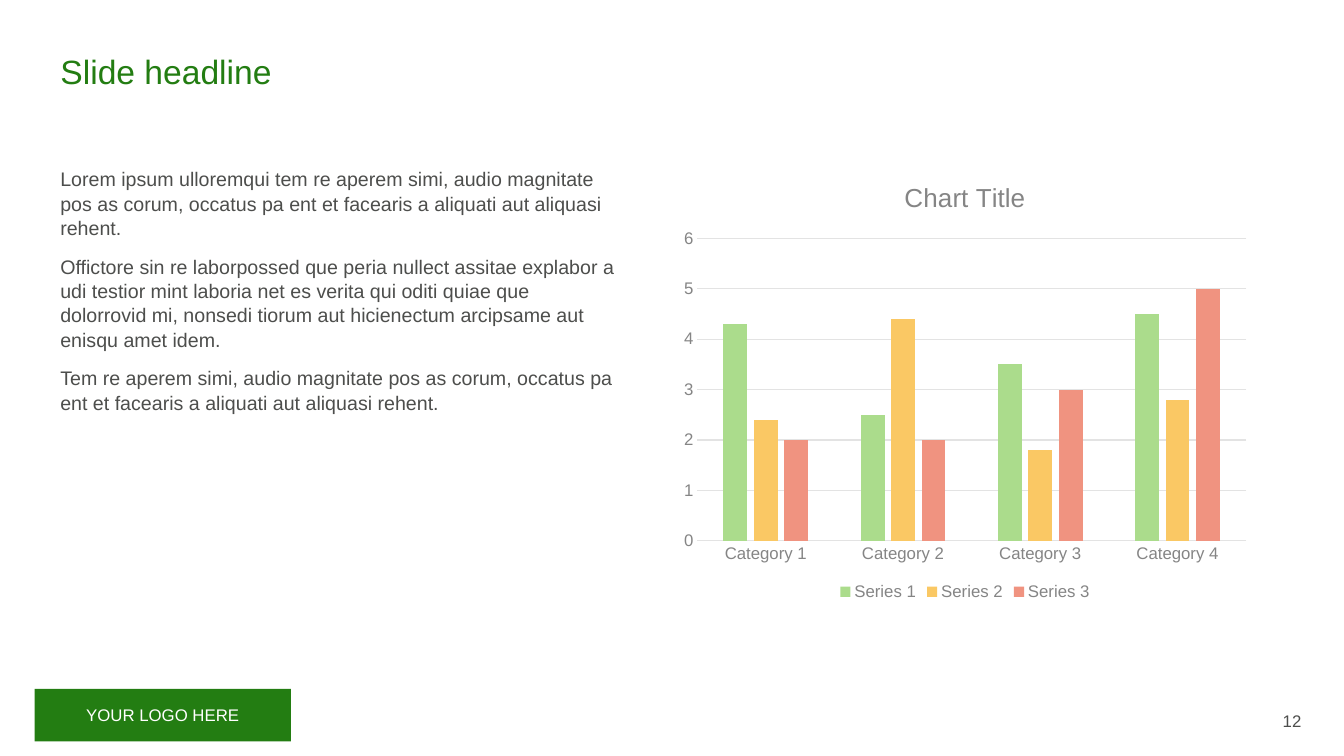
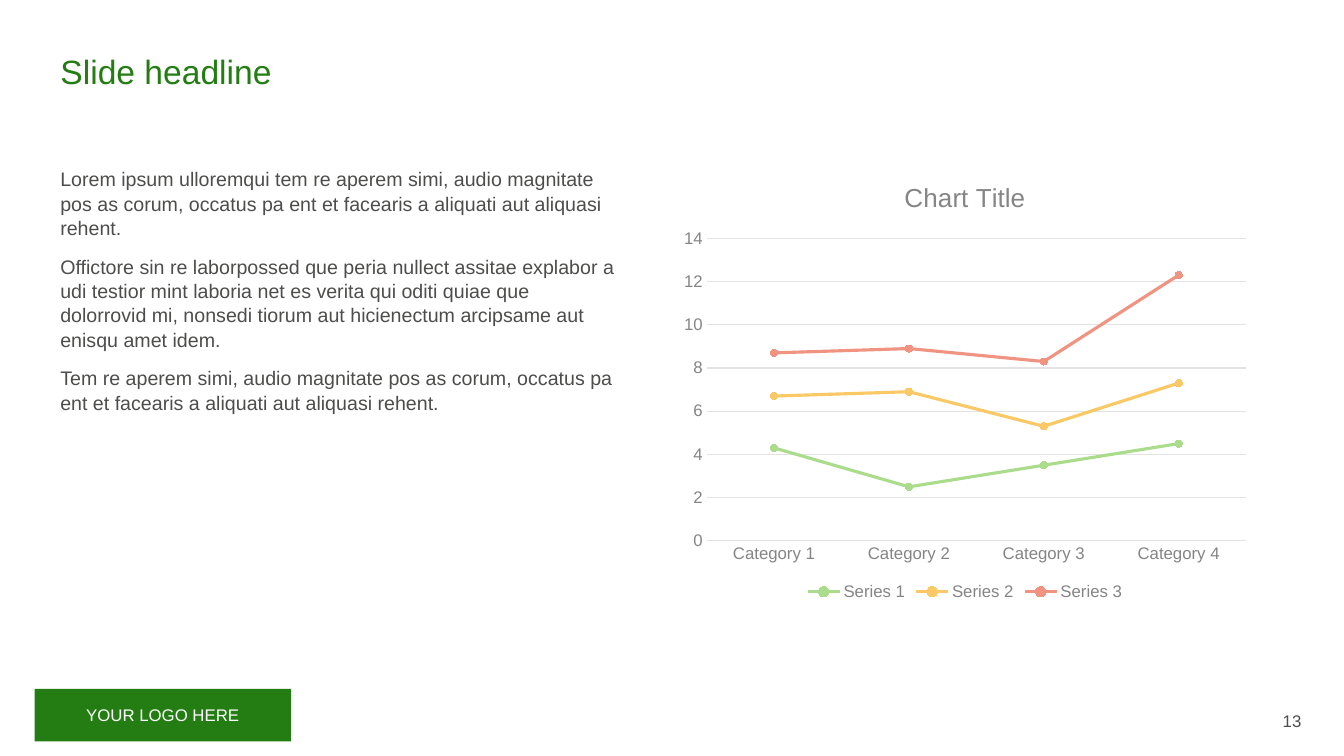
"""Build two slides that pair body text with a column chart and a stacked line chart."""
from pptx import Presentation
from pptx.chart.data import CategoryChartData
from pptx.dml.color import RGBColor
from pptx.enum.chart import XL_CHART_TYPE as ChartType, XL_LEGEND_POSITION as LegendPosition
from pptx.enum.chart import XL_MARKER_STYLE as MarkerStyle, XL_TICK_MARK as TickMark
from pptx.enum.shapes import MSO_SHAPE as Shape
from pptx.enum.text import MSO_ANCHOR as Anchor, MSO_AUTO_SIZE as AutoSize, PP_ALIGN as Align
from pptx.util import Pt

COLORS = {
    "green": "237D12",
    "white": "FFFFFF",
    "text": "4D4E4C",
    "chart": "434343",
    "label": "858585",
    "grid": "E3E3E3",
}
SERIES = [
    ("Series 1", (4.3, 2.5, 3.5, 4.5), "ABDC8C"),
    ("Series 2", (2.4, 4.4, 1.8, 2.8), "FAC864"),
    ("Series 3", (2, 2, 3, 5), "F09380"),
]
BODY = [
    "Lorem ipsum ulloremqui tem re aperem simi, audio magnitate pos as corum, "
    "occatus pa ent et facearis a aliquati aut aliquasi rehent.",
    "Offictore sin re laborpossed que peria nullect assitae explabor a udi testior "
    "mint laboria net es verita qui oditi quiae que dolorrovid mi, nonsedi tiorum "
    "aut hicienectum arcipsame aut enisqu amet idem.",
    "Tem re aperem simi, audio magnitate pos as corum, occatus pa ent et facearis "
    "a aliquati aut aliquasi rehent.",
]
SLIDES = [("12", ChartType.COLUMN_CLUSTERED), ("13", ChartType.LINE_MARKERS_STACKED)]
CONTENT_TOP, CONTENT_HEIGHT = Pt(115.2), Pt(316.8)


def style_font(font, size, color):
    font.name = "Arial"
    font.size = Pt(size)
    font.bold = False
    font.color.rgb = RGBColor.from_string(COLORS[color])


def write(shape, texts, size, color, align=Align.LEFT, anchor=Anchor.TOP, spacing=1.0):
    frame = shape.text_frame
    frame.word_wrap = True
    frame.auto_size = AutoSize.NONE
    frame.vertical_anchor = anchor
    for index, text in enumerate(texts):
        paragraph = frame.add_paragraph() if index else frame.paragraphs[0]
        paragraph.alignment = align
        paragraph.line_spacing = spacing
        paragraph.space_before = Pt(10 if index else 0)
        run = paragraph.add_run()
        run.text = text
        style_font(run.font, size, color)


presentation = Presentation()
presentation.slide_width = Pt(960)
presentation.slide_height = Pt(540)
title_only = presentation.slide_layouts[5]

chart_data = CategoryChartData()
chart_data.categories = [f"Category {number}" for number in range(1, 5)]
for name, values, _ in SERIES:
    chart_data.add_series(name, values)

for page_number, chart_type in SLIDES:
    slide = presentation.slides.add_slide(title_only)
    slide.background.fill.solid()
    slide.background.fill.fore_color.rgb = RGBColor.from_string(COLORS["white"])

    title = slide.shapes.title
    title.left, title.top, title.width, title.height = Pt(36), Pt(36), Pt(862), Pt(42.5)
    write(title, ["Slide headline"], 24, "green", spacing=0.9)

    logo_box = slide.shapes.add_shape(Shape.RECTANGLE, Pt(24.8), Pt(492), Pt(183), Pt(37.5))
    logo_box.shadow.inherit = False
    logo_box.fill.solid()
    logo_box.fill.fore_color.rgb = RGBColor.from_string(COLORS["green"])
    logo_box.line.fill.background()
    write(logo_box, ["YOUR LOGO HERE"], 12, "white", Align.CENTER, Anchor.MIDDLE)

    page_box = slide.shapes.add_textbox(Pt(720.7), Pt(500.4), Pt(216), Pt(28.8))
    write(page_box, [page_number], 12, "text", Align.RIGHT, Anchor.MIDDLE)

    body_box = slide.shapes.add_textbox(Pt(36), CONTENT_TOP, Pt(414.7), CONTENT_HEIGHT)
    write(body_box, BODY, 14, "text", spacing=1.04)

    chart = slide.shapes.add_chart(
        chart_type, Pt(480.2), CONTENT_TOP, Pt(418.3), CONTENT_HEIGHT, chart_data
    ).chart
    style_font(chart.font, 10, "chart")
    chart.has_title = True
    chart_title_run = chart.chart_title.text_frame.paragraphs[0].add_run()
    chart_title_run.text = "Chart Title"
    style_font(chart_title_run.font, 18.6, "label")
    chart.has_legend = True
    chart.legend.position = LegendPosition.BOTTOM
    chart.legend.include_in_layout = False
    style_font(chart.legend.font, 12, "label")

    category_axis, value_axis = chart.category_axis, chart.value_axis
    for axis in (category_axis, value_axis):
        axis.major_tick_mark = axis.minor_tick_mark = TickMark.NONE
        style_font(axis.tick_labels.font, 12, "label")
    value_axis.format.line.fill.background()
    value_axis.has_major_gridlines = True
    for line in (category_axis.format.line, value_axis.major_gridlines.format.line):
        line.color.rgb = RGBColor.from_string(COLORS["grid"])
        line.width = Pt(0.75)

    plot = chart.plots[0]
    plot.vary_by_categories = False
    is_column = chart_type == ChartType.COLUMN_CLUSTERED
    if is_column:
        plot.gap_width = 219
        plot.overlap = -27
    for series, (_, _, color) in zip(plot.series, SERIES):
        series_color = RGBColor.from_string(color)
        fills = [series.format.fill]
        if not is_column:
            series.smooth = False
            series.format.line.color.rgb = series_color
            series.format.line.width = Pt(2.25)
            series.marker.style = MarkerStyle.CIRCLE
            series.marker.size = 5
            series.marker.format.line.color.rgb = series_color
            fills = [series.marker.format.fill]
        for fill in fills:
            fill.solid()
            fill.fore_color.rgb = series_color

presentation.save("out.pptx")
